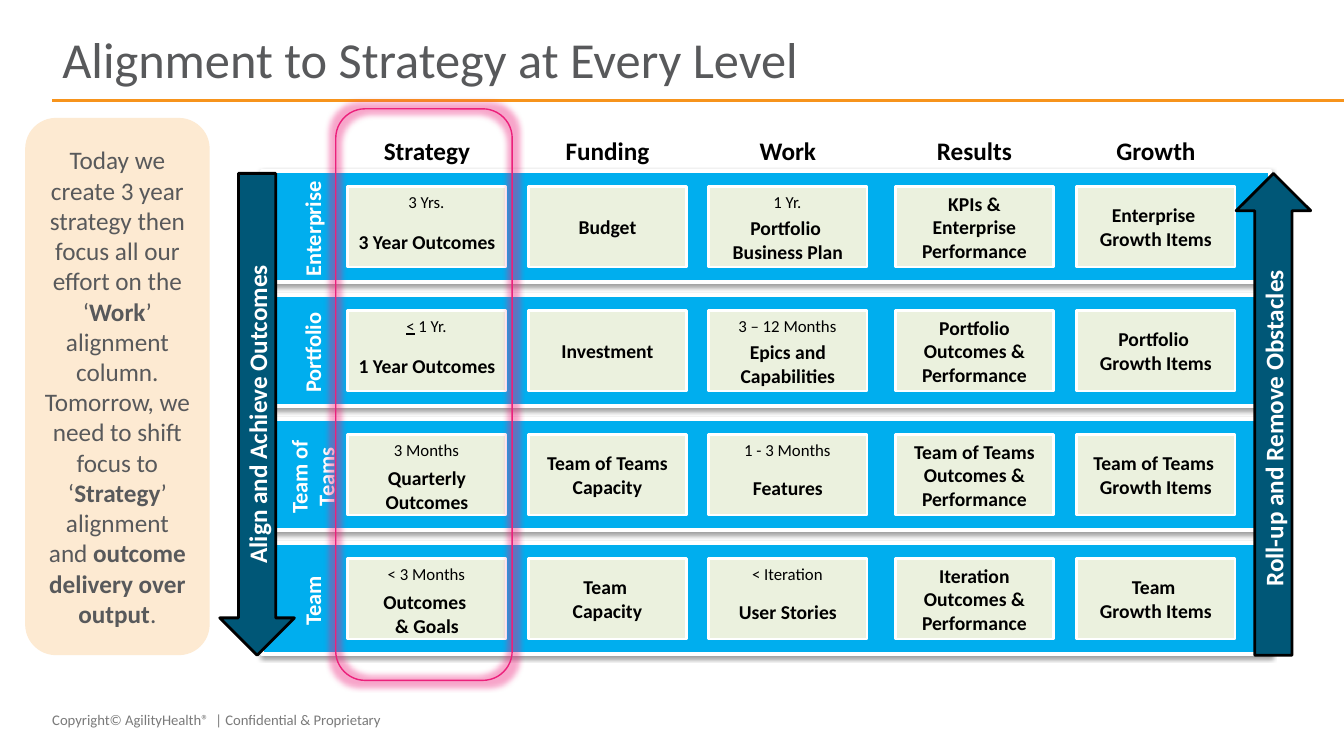
from lxml import etree
from pptx import Presentation
from pptx.dml.color import RGBColor
from pptx.enum.shapes import MSO_CONNECTOR as Connector
from pptx.enum.shapes import MSO_SHAPE as Shape
from pptx.enum.text import MSO_ANCHOR as Anchor
from pptx.enum.text import PP_ALIGN as Align
from pptx.oxml.ns import qn
from pptx.util import Inches, Pt

COLORS = {
    "band": "00AEEE", "cell": "EBF1DE", "arrow": "005777", "note": "FDEAD2",
    "rule": "F7941C", "highlight": "EC207B", "title": "58595B",
    "footer": "7A7A7A", "white": "FFFFFF", "black": "000000",
}
FONT = "Calibri"
BAND_LEFT, BAND_TOP, BAND_WIDTH, BAND_HEIGHT, ROW_PITCH = 2.6, 1.7, 10, 1.1, 1.23
CELL_WIDTH, CELL_HEIGHT, CELL_INSET = 1.57, 0.8, 0.15
ARROW_TOP, ARROW_WIDTH, ARROW_HEIGHT = 1.72, 0.74, 4.78

COLUMNS = [("Strategy", 3.45, 0.35), ("Funding", 5.24, None), ("Work", 7.03, 0.3),
           ("Results", 8.88, None), ("Growth", 10.68, None)]
LEVELS = [
    ("Enterprise", 1.2, [
        ("3 Year Outcomes", "3 Yrs."), ("Budget", None),
        ("Portfolio \vBusiness Plan", "1 Yr."),
        ("KPIs & Enterprise Performance", None), ("Enterprise \nGrowth Items", None)]),
    ("Portfolio", 1.06, [
        ("1 Year Outcomes", "*<* 1 Yr."), ("Investment", None),
        ("Epics and Capabilities", "3 – 12 Months"),
        ("Portfolio Outcomes & Performance", None), ("Portfolio \nGrowth Items", None)]),
    ("Team of Teams", 1.03, [
        ("Quarterly Outcomes", "3 Months"), ("Team of Teams Capacity", None),
        ("Features", "1 - 3 Months"),
        ("Team of Teams Outcomes & Performance", None),
        ("Team of Teams \nGrowth Items", None)]),
    ("Team", 0.87, [
        ("Outcomes \v& Goals", "< 3 Months"), ("Team \nCapacity", None),
        ("User Stories", "< Iteration"),
        ("Iteration Outcomes & Performance", None), ("Team \nGrowth Items", None)]),
]
NOTE = ("Today we create 3 year strategy then focus all our effort on the ‘*Work*’ "
        "alignment column. Tomorrow, we need to shift focus to ‘*Strategy*’ "
        "alignment and *outcome delivery over output*.")


def rgb(name):
    return RGBColor.from_string(COLORS[name])


def write(frame, text, size, color, bold=False, align=Align.CENTER, emphasis="bold"):
    frame.word_wrap = True
    if "*" in text:
        for index, piece in enumerate(text.split("*")):
            if piece:
                run = frame.paragraphs[0].add_run()
                run.text = piece
                setattr(run.font, emphasis, index % 2 == 1)
    else:
        frame.text = text
    for paragraph in frame.paragraphs:
        paragraph.alignment = align
        for run in paragraph.runs:
            run.font.name, run.font.size = FONT, Pt(size)
            run.font.color.rgb = rgb(color)
            if bold:
                run.font.bold = True


def add_label(slide, box, text, size, color, rotation=0, **style):
    label = slide.shapes.add_textbox(*map(Inches, box))
    label.rotation = rotation
    write(label.text_frame, text, size, color, **style)
    return label.text_frame


def add_side_label(slide, center_x, center_y, length, depth, text, size):
    box = (center_x - length / 2, center_y - depth / 2, length, depth)
    add_label(slide, box, text, size, "white", rotation=270, bold=True)


def add_block(slide, kind, box, fill=None, line=None, width=0):
    block = slide.shapes.add_shape(kind, *map(Inches, box))
    block.shadow.inherit = False
    if fill:
        block.fill.solid()
        block.fill.fore_color.rgb = rgb(fill)
    else:
        block.fill.background()
    if line:
        block.line.color.rgb = rgb(line)
        block.line.width = Pt(width)
    else:
        block.line.fill.background()
    return block


def add_effect(block, effect_name, color, alpha, **settings):
    effects = block._element.spPr.find(qn("a:effectLst"))
    effect = etree.SubElement(effects, qn(effect_name), settings)
    tint = etree.SubElement(effect, qn("a:srgbClr"), val=COLORS[color])
    etree.SubElement(tint, qn("a:alpha"), val=str(alpha * 1000))


def add_rule(slide, left, right, top):
    rule = slide.shapes.add_connector(
        Connector.STRAIGHT, *map(Inches, (left, top, right, top)))
    rule.line.color.rgb = rgb("rule")
    rule.line.width = Pt(2)
    etree.SubElement(rule._element.spPr, qn("a:effectLst"))


def add_cell(slide, left, top, text, caption, caption_space):
    cell = add_block(slide, Shape.RECTANGLE, (left, top, CELL_WIDTH, CELL_HEIGHT),
                     "cell", "white", 2)
    frame = cell.text_frame
    frame.vertical_anchor = Anchor.MIDDLE
    write(frame, text, 14, "black", bold=True)
    if caption:
        frame.margin_top = Inches(caption_space)
        frame.margin_left = frame.margin_right = Inches(0.05)
        add_label(slide, (left + 0.18, top, 1.2, 0.3), caption, 12, "black",
                  emphasis="underline")


def add_level(slide, row, name, name_length, cells):
    top = BAND_TOP + row * ROW_PITCH
    band = add_block(slide, Shape.RECTANGLE, (BAND_LEFT, top, BAND_WIDTH, BAND_HEIGHT),
                     "band", "white", 3)
    add_effect(band, "a:outerShdw", "black", 38,
               blurRad="40000", dist="20000", dir="5400000", rotWithShape="0")
    name_depth = 0.64 if " " in name else 0.37
    add_side_label(slide, 3.1, top + 0.57, name_length, name_depth, name, 16)
    for (_, left, caption_space), (text, caption) in zip(COLUMNS, cells):
        add_cell(slide, left, top + CELL_INSET, text, caption, caption_space)


def add_side_arrow(slide, kind, left, text, label_y):
    add_block(slide, kind, (left, ARROW_TOP, ARROW_WIDTH, ARROW_HEIGHT),
              "arrow", "black", 2)
    add_side_label(slide, left + ARROW_WIDTH / 2, label_y, ARROW_HEIGHT, 0.4, text, 18)


def main():
    deck = Presentation()
    deck.slide_width, deck.slide_height = Inches(13.33), Inches(7.5)
    slide = deck.slides.add_slide(deck.slide_layouts[6])

    add_label(slide, (0.42, 7, 4.5, 0.28),
              "Copyright© AgilityHealth®  | Confidential & Proprietary",
              10.5, "footer", align=Align.LEFT)
    add_rule(slide, 0.52, 13.33, 1)
    title = add_label(slide, (0.52, 0.27, 12.29, 0.7),
                      "Alignment to Strategy at Every Level", 36, "title",
                      align=Align.LEFT)
    title.vertical_anchor = Anchor.MIDDLE
    title.paragraphs[0].line_spacing = 0.9

    for row, level in reversed(list(enumerate(LEVELS))):
        add_level(slide, row, *level)
    for heading, left, _ in COLUMNS:
        add_label(slide, (left, 1.29, CELL_WIDTH, 0.4), heading, 18, "black", bold=True)

    add_side_arrow(slide, Shape.UP_ARROW, 12.26, "Roll-up and Remove Obstacles", 4.25)
    add_side_arrow(slide, Shape.DOWN_ARROW, 2.18, "Align and Achieve Outcomes", 4.11)

    note = add_block(slide, Shape.ROUNDED_RECTANGLE, (0.25, 1.17, 1.83, 5.33), "note")
    note.text_frame.vertical_anchor = Anchor.MIDDLE
    write(note.text_frame, NOTE, 18, "title")

    highlight = add_block(slide, Shape.ROUNDED_RECTANGLE, (3.33, 1.08, 1.75, 5.67),
                          line="highlight", width=1)
    add_effect(highlight, "a:glow", "highlight", 40, rad="101600")

    deck.save("out.pptx")


if __name__ == "__main__":
    main()
